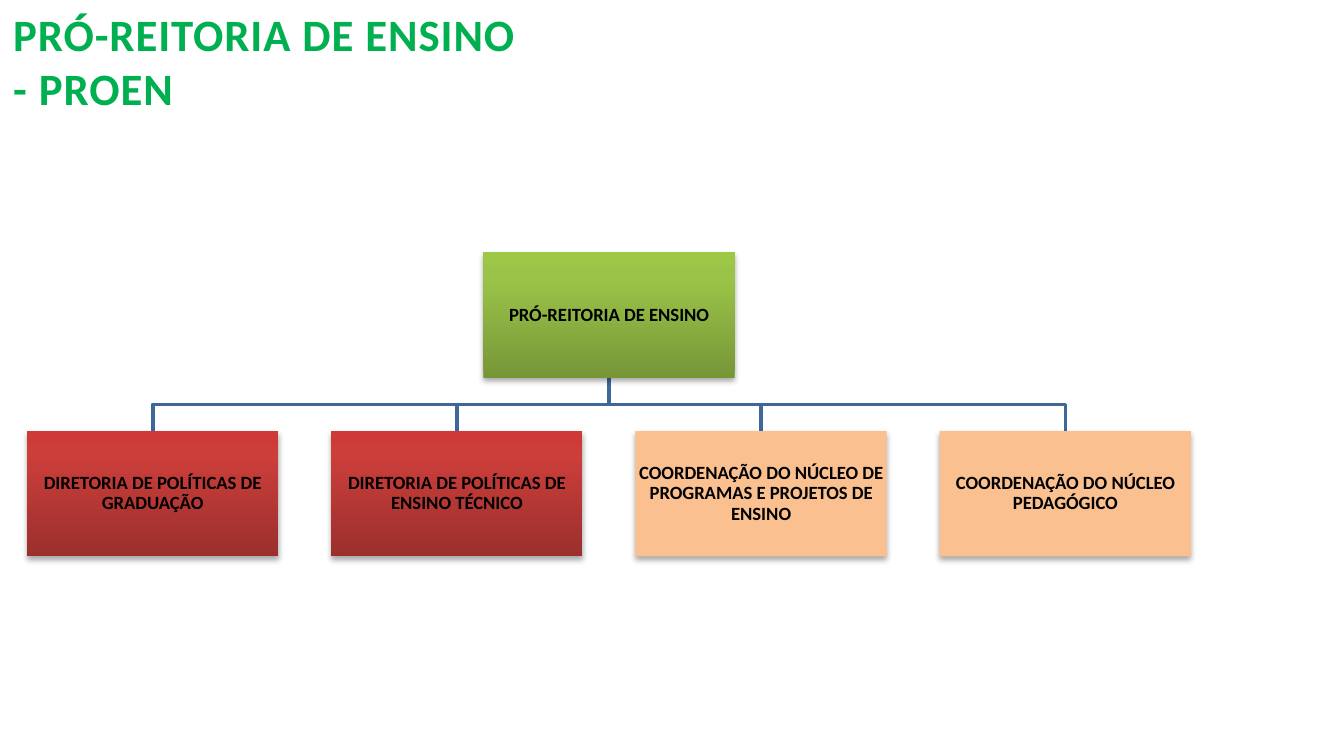
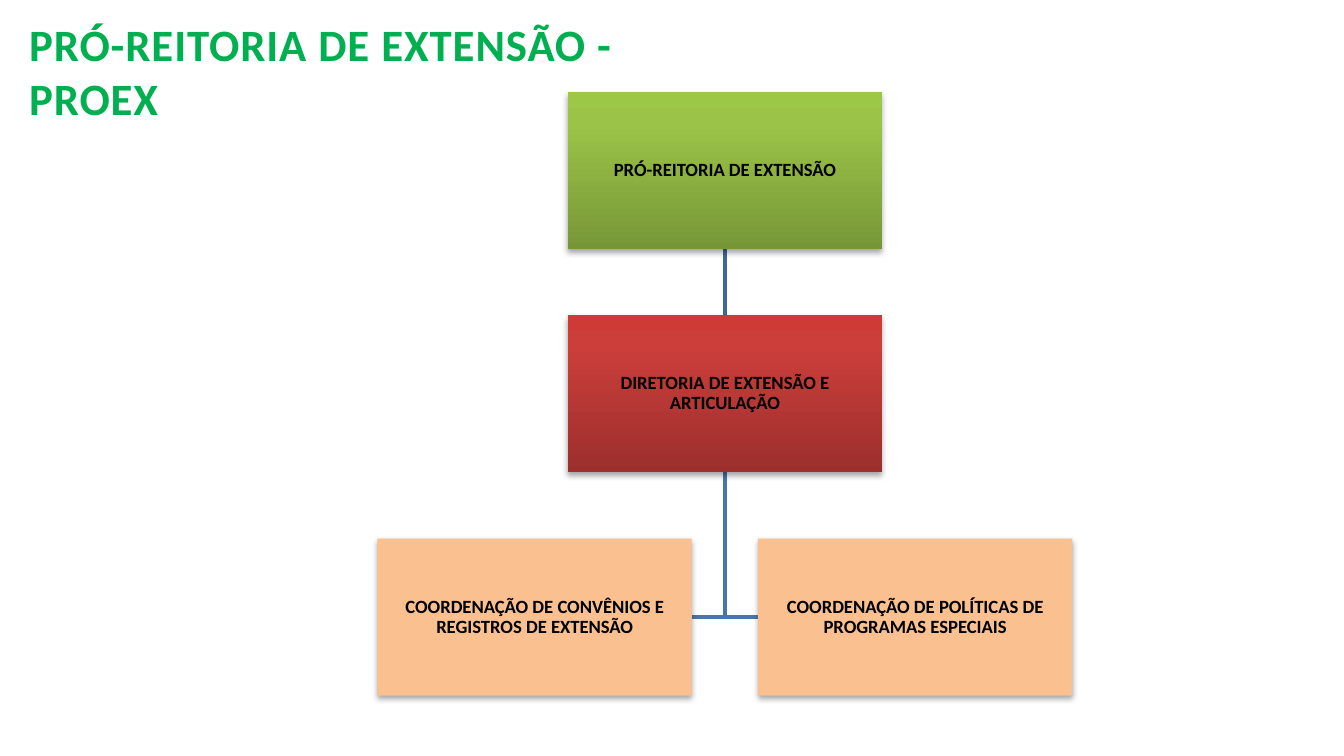
from lxml.etree import SubElement
from pptx import Presentation
from pptx.dml.color import RGBColor
from pptx.enum.shapes import MSO_CONNECTOR, MSO_SHAPE
from pptx.enum.text import MSO_ANCHOR, MSO_AUTO_SIZE, PP_ALIGN
from pptx.oxml.ns import qn
from pptx.util import Cm, Pt

GREEN = RGBColor(0x00, 0xB0, 0x50)
BLACK = RGBColor(0x00, 0x00, 0x00)
NAVY = RGBColor(0x3F, 0x67, 0x97)
BLUE = RGBColor(0x48, 0x75, 0xAC)
PEACH = RGBColor(0xFA, 0xC0, 0x90)

# Gradient stops run from the bottom of a box to its top.
LIME = [(0, RGBColor(0x77, 0x97, 0x37)), (80, RGBColor(0x9B, 0xC3, 0x48)),
        (100, RGBColor(0x9D, 0xC7, 0x46))]
RED = [(0, RGBColor(0x9C, 0x2F, 0x2D)), (80, RGBColor(0xCB, 0x3E, 0x3A)),
       (100, RGBColor(0xCE, 0x3B, 0x37))]

TITLE = {"name": "Calibri", "size": Pt(24), "bold": True}
LABEL = {"name": "Calibri", "size": Pt(10), "bold": True}
INSET = Cm(0.03)
FRAME = {"word_wrap": True, "vertical_anchor": MSO_ANCHOR.MIDDLE,
         "margin_left": INSET, "margin_right": INSET,
         "margin_top": INSET, "margin_bottom": INSET}
SHADOW = {"blurRad": "40000", "dist": "23000", "dir": "5400000", "rotWithShape": "0"}

TEACH = {
    "title": ["PRÓ-REITORIA DE ENSINO", "- PROEN"],
    "place": (0, 0, 10.7, 2.3),
    "head": ("PRÓ-REITORIA DE ENSINO", LIME),
    "units": [
        ("DIRETORIA DE POLÍTICAS DE GRADUAÇÃO", RED),
        ("DIRETORIA DE POLÍTICAS DE ENSINO TÉCNICO", RED),
        ("COORDENAÇÃO DO NÚCLEO DE PROGRAMAS E PROJETOS DE ENSINO", PEACH),
        ("COORDENAÇÃO DO NÚCLEO PEDAGÓGICO", PEACH),
    ],
}
REACH = {
    "title": ["PRÓ-REITORIA DE EXTENSÃO - PROEX"],
    "place": (0.3, 0.19, 11.8, 2.3),
    "chain": [("PRÓ-REITORIA DE EXTENSÃO", LIME),
              ("DIRETORIA DE EXTENSÃO E ARTICULAÇÃO", RED)],
    "units": [("COORDENAÇÃO DE CONVÊNIOS E REGISTROS DE EXTENSÃO", PEACH),
              ("COORDENAÇÃO DE POLÍTICAS DE PROGRAMAS ESPECIAIS", PEACH)],
}


def style(item, values):
    for name, value in values.items():
        setattr(item, name, value)


def write(para, text, font, color):
    run = para.add_run()
    run.text = text
    style(run.font, font)
    run.font.color.rgb = color
    return run


def start(deck, data):
    """Add a blank slide with its title."""
    slide = deck.slides.add_slide(deck.slide_layouts[6])
    frame = slide.shapes.add_textbox(*map(Cm, data["place"])).text_frame
    style(frame, {"word_wrap": True, "auto_size": MSO_AUTO_SIZE.SHAPE_TO_FIT_TEXT})
    for i, line in enumerate(data["title"]):
        para = frame.add_paragraph() if i else frame.paragraphs[0]
        run = write(para, line, TITLE, GREEN)
        run.font._element.set("spc", "50")
    return slide


def paint(box, fill):
    if isinstance(fill, RGBColor):
        box.fill.solid()
        box.fill.fore_color.rgb = fill
        return
    box.fill.gradient()
    box.fill.gradient_angle = 90
    stops = box._element.spPr.find(qn("a:gradFill")).find(qn("a:gsLst"))
    for old in list(stops):
        stops.remove(old)
    for pos, color in fill:
        stop = SubElement(stops, qn("a:gs"), pos=str(pos * 1000))
        SubElement(stop, qn("a:srgbClr"), val=str(color))


def shade(box):
    """Give the box a soft shadow below it."""
    box.shadow.inherit = False
    effects = box._element.spPr.find(qn("a:effectLst"))
    outer = SubElement(effects, qn("a:outerShdw"), SHADOW)
    black = SubElement(outer, qn("a:srgbClr"), val=str(BLACK))
    SubElement(black, qn("a:alpha"), val="35000")


def add_box(slide, unit, mid, top, size):
    """Draw a unit centred on mid."""
    text, fill = unit
    wide, high = size
    box = slide.shapes.add_shape(MSO_SHAPE.RECTANGLE, Cm(mid - wide / 2), Cm(top),
                                 Cm(wide), Cm(high))
    paint(box, fill)
    box.line.fill.background()
    shade(box)
    style(box.text_frame, FRAME)
    para = box.text_frame.paragraphs[0]
    style(para, {"alignment": PP_ALIGN.CENTER, "line_spacing": 0.9})
    write(para, text, LABEL, BLACK)


def join(slide, points, color):
    """Link the points with a straight or a bent line."""
    spots = [(Cm(x), Cm(y)) for x, y in points]
    if len(spots) == 2:
        link = slide.shapes.add_connector(MSO_CONNECTOR.STRAIGHT, *spots[0], *spots[1])
        SubElement(link._element.spPr, qn("a:effectLst"))
    else:
        form = slide.shapes.build_freeform(*spots[0])
        form.add_line_segments(spots[1:], close=False)
        link = form.convert_to_shape()
        link.fill.background()
        link.shadow.inherit = False
    link.line.color.rgb = color
    link.line.width = Pt(2)


def draw_teach(deck):
    slide = start(deck, TEACH)
    size = wide, high = 4.75, 2.37
    left, step, top, low = 0.51, 5.75, 4.77, 8.15
    units = TEACH["units"]
    mids = [left + wide / 2 + i * step for i in range(len(units))]
    mid = sum(mids) / len(mids)
    foot = top + high
    bend = (foot + low) / 2
    for x in mids:
        join(slide, [(mid, foot), (mid, bend), (x, bend), (x, low)], NAVY)
    add_box(slide, TEACH["head"], mid, top, size)
    for unit, x in zip(units, mids):
        add_box(slide, unit, x, low, size)


def draw_reach(deck):
    slide = start(deck, REACH)
    size = wide, high = 5.94, 2.97
    mid, top, gap = 13.7, 1.74, 1.25
    tops = [top + i * (high + gap) for i in range(3)]
    side = (wide + gap) / 2
    bend = tops[2] + high / 2
    for way in (1, -1):
        join(slide, [(mid, tops[1] + high), (mid, bend), (mid + way * gap / 2, bend)], BLUE)
    join(slide, [(mid, tops[0] + high), (mid, tops[1])], NAVY)
    for unit, y in zip(REACH["chain"], tops):
        add_box(slide, unit, mid, y, size)
    for unit, way in zip(REACH["units"], (-1, 1)):
        add_box(slide, unit, mid + way * side, tops[2], size)


def main():
    deck = Presentation()
    style(deck, {"slide_width": Cm(25.4), "slide_height": Cm(14.29)})
    draw_teach(deck)
    draw_reach(deck)
    deck.save("out.pptx")


if __name__ == "__main__":
    main()
